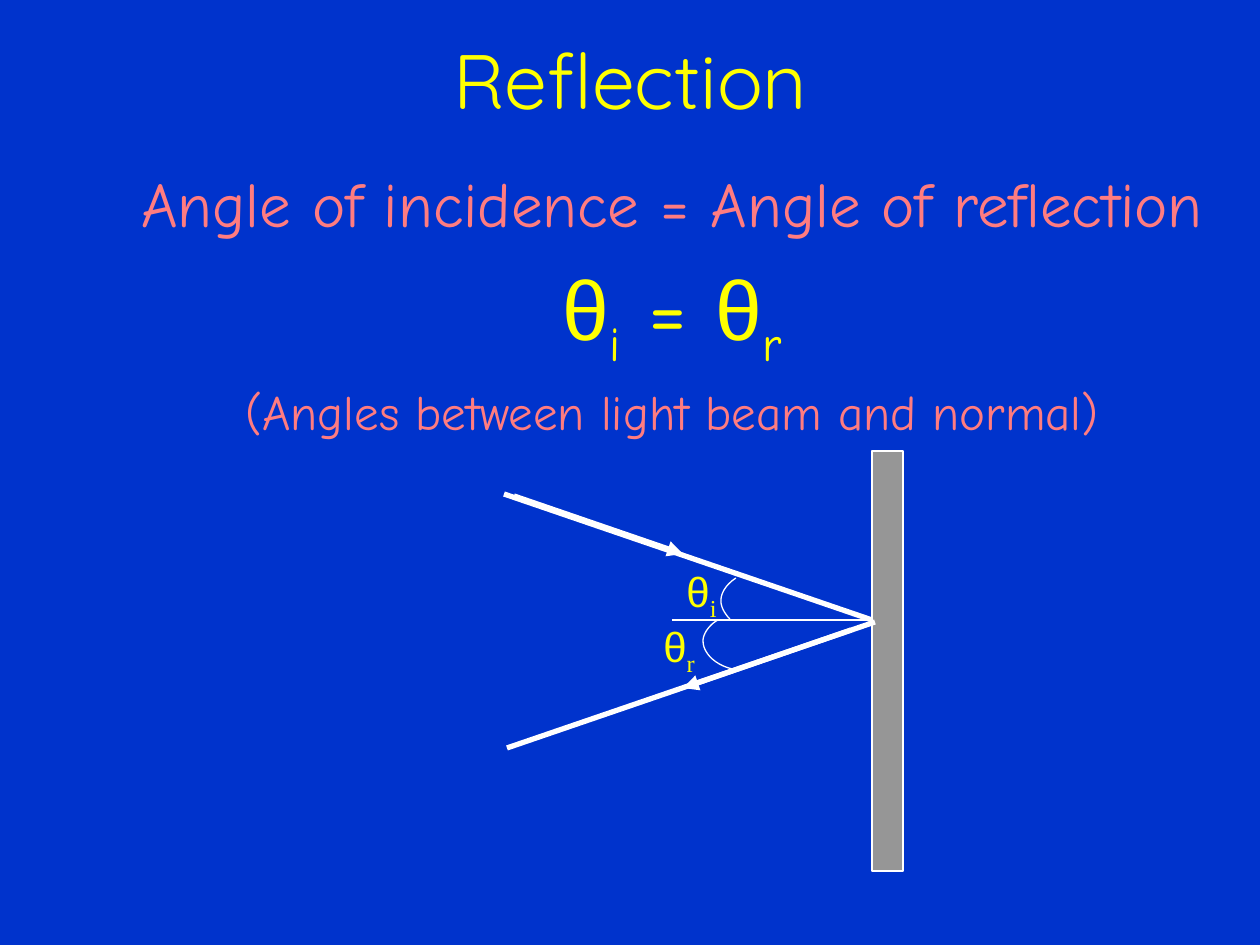
from lxml import etree
from pptx import Presentation
from pptx.dml.color import RGBColor
from pptx.enum.shapes import MSO_CONNECTOR, MSO_SHAPE
from pptx.enum.text import MSO_ANCHOR, MSO_AUTO_SIZE, PP_ALIGN
from pptx.oxml.ns import qn
from pptx.util import Pt

PX = 914400 / 126  # EMU per px
STRAIGHT, RECT = MSO_CONNECTOR.STRAIGHT, MSO_SHAPE.RECTANGLE
CENTER, MIDDLE, NO_FIT = PP_ALIGN.CENTER, MSO_ANCHOR.MIDDLE, MSO_AUTO_SIZE.NONE
COLORS = {name: RGBColor.from_string(value) for name, value in {
    "back": "0033CC", "yellow": "FFFF00", "pink": "FF7C80",
    "mirror": "969696", "white": "FFFFFF"}.items()}


def px(*values):
    return [round(v * PX) for v in values]


def add_runs(p, size, color, runs):
    for text, font, baseline in runs:
        r = p.add_run()
        r.text = text
        r.font.size, r.font.name = Pt(size), font
        r.font.color.rgb = COLORS[color]
        if baseline:
            r._r.get_or_add_rPr().set("baseline", str(baseline * 1000))


prs = Presentation()
prs.slide_width, prs.slide_height = px(1260, 945)
s = prs.slides.add_slide(prs.slide_layouts[1])
s.background.fill.solid()
s.background.fill.fore_color.rgb = COLORS["back"]

# Title
title = s.shapes.title
title.left, title.top, title.width, title.height = px(95, 0, 1071, 158)
title.text_frame.vertical_anchor = MIDDLE
title.text_frame.auto_size = NO_FIT
p = title.text_frame.paragraphs[0]
p.alignment = CENTER
add_runs(p, 44, "yellow", [("Reflection", "Quicksand", 0)])

# Law of reflection
body = s.placeholders[1]
body.left, body.top, body.width, body.height = px(105, 158, 1134, 567)
tf = body.text_frame
tf.auto_size = NO_FIT
HAND = "Comic Neue"
law = [
    (36, "pink", [("Angle of incidence = Angle of reflection", HAND, 0)]),
    (48, "yellow", [("θ", "Arial", 0), ("i", HAND, -25), (" = ", HAND, 0),
                    ("θ", "Arial", 0), ("r", HAND, -25)]),
    (28, "pink", [("(Angles between light beam and normal)", HAND, 0)]),
]
for i, (size, color, runs) in enumerate(law):
    p = tf.add_paragraph() if i else tf.paragraphs[0]
    p.alignment = CENTER
    etree.SubElement(p._p.get_or_add_pPr(), qn("a:buNone"))
    add_runs(p, size, color, runs)

# Mirror
mirror = s.shapes.add_shape(RECT, *px(872, 451, 31, 420))
mirror.shadow.inherit = False
mirror.fill.solid()
mirror.fill.fore_color.rgb = COLORS["mirror"]
mirror.line.color.rgb = COLORS["white"]
mirror.line.width = Pt(0.75)

# Normal, then incident and reflected beams with their arrows
lines = [
    (672, 620, 872, 620, 0.75, False),
    (504, 494, 872, 620, 3, False),
    (514, 496, 683, 554, 3, True),
    (507, 748, 875, 622, 3, False),
    (851, 630, 683, 688, 3, True),
]
for x1, y1, x2, y2, width, arrow in lines:
    sp = s.shapes.add_connector(STRAIGHT, *px(x1, y1, x2, y2))
    sp.line.color.rgb = COLORS["white"]
    sp.line.width = Pt(width)
    if arrow:
        etree.SubElement(sp.line._get_or_add_ln(), qn("a:tailEnd"), type="triangle")
    etree.SubElement(sp._element.spPr, qn("a:effectLst"))

# Angle arcs, each sampled from two cubic Bezier curves
STEPS = 12
arcs = [
    [[(736, 578), (727, 584), (721, 592), (721, 601)],
     [(721, 601), (721, 607), (725, 614), (730, 619)]],
    [[(718, 620), (709, 625), (703, 634), (703, 641)],
     [(703, 641), (703, 654), (717, 667), (737, 670)]],
]
for curves in arcs:
    points = [px(*curves[0][0])]
    for curve in curves:
        for n in range(1, STEPS + 1):
            t = n / STEPS
            weights = ((1 - t) ** 3, 3 * t * (1 - t) ** 2, 3 * t ** 2 * (1 - t), t ** 3)
            points.append(px(*(sum(w * c for w, c in zip(weights, axis))
                               for axis in zip(*curve))))
    builder = s.shapes.build_freeform(*points[0])
    builder.add_line_segments(points[1:], close=False)
    sp = builder.convert_to_shape()
    sp.shadow.inherit = False
    sp.fill.background()
    sp.line.color.rgb = COLORS["white"]
    sp.line.width = Pt(0.75)

# Angle labels
for x, y, index in [(674, 559, "i"), (651, 614, "r")]:
    tf = s.shapes.add_textbox(*px(x, y, 84, 63)).text_frame
    tf.word_wrap = True
    add_runs(tf.paragraphs[0], 24, "yellow",
             [("θ", "Arial", 0), (index, "Times New Roman", -25)])

prs.save("out.pptx")
